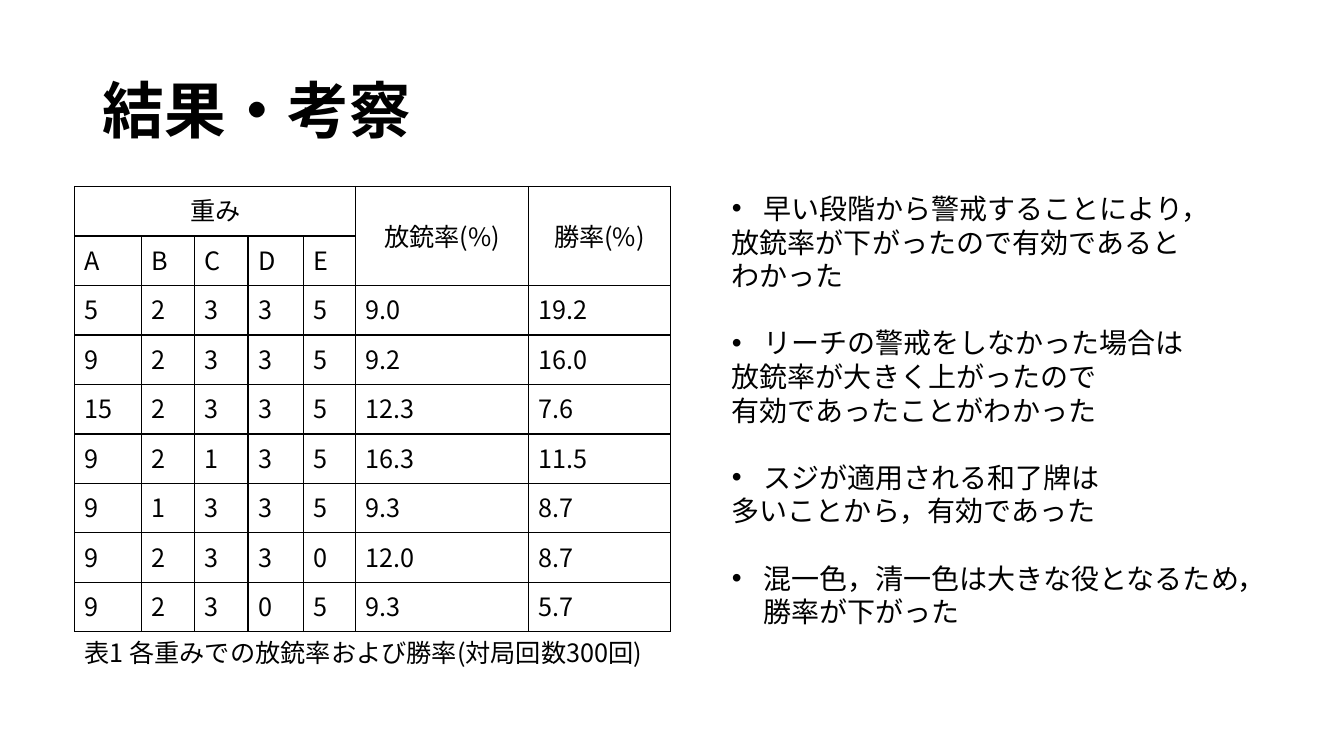
import dataclasses
import typing

import lxml.etree
import pptx
import pptx.dml.color
import pptx.enum.lang
import pptx.enum.text
import pptx.oxml.ns
import pptx.util

Inches = pptx.util.Inches
Pt = pptx.util.Pt
Align = pptx.enum.text.PP_ALIGN
Anchor = pptx.enum.text.MSO_ANCHOR


@dataclasses.dataclass(frozen=True)
class Theme:
    font: str = "Noto Sans CJK JP"
    ink: str = "000000"
    paper: str = "FFFFFF"
    title_size: int = 44
    body_size: int = 20
    table_size: int = 18
    border_width: int = 1


@dataclasses.dataclass(frozen=True)
class Box:
    left: float
    top: float
    width: float
    height: float


@dataclasses.dataclass(frozen=True)
class Heading:
    text: str
    row: int
    column: int
    last_row: int
    last_column: int


THEME = Theme()
TITLE_BOX = Box(0.92, 0.4, 11.5, 1.45)
TABLE_BOX = Box(0.74, 1.85, 5.93, 4.42)
CAPTION_BOX = Box(0.74, 6.27, 5.93, 0.4)
FINDINGS_BOX = Box(7.16, 1.85, 5.26, 4.48)
BULLET_INDENT = 0.31
FINDING_GAP = 24

COLUMN_WIDTHS = [0.66, 0.53, 0.53, 0.55, 0.52, 1.71, 1.41]
HEADINGS = [
    Heading("重み", 0, 0, 0, 4),
    Heading("放銃率(%)", 0, 5, 1, 5),
    Heading("勝率(%)", 0, 6, 1, 6),
]
RESULTS = [
    ["A", "B", "C", "D", "E"],
    ["5", "2", "3", "3", "5", "9.0", "19.2"],
    ["9", "2", "3", "3", "5", "9.2", "16.0"],
    ["15", "2", "3", "3", "5", "12.3", "7.6"],
    ["9", "2", "1", "3", "5", "16.3", "11.5"],
    ["9", "1", "3", "3", "5", "9.3", "8.7"],
    ["9", "2", "3", "3", "0", "12.0", "8.7"],
    ["9", "2", "3", "0", "5", "9.3", "5.7"],
]
FINDINGS = [
    ["早い段階から警戒することにより，", "放銃率が下がったので有効であると", "わかった"],
    ["リーチの警戒をしなかった場合は", "放銃率が大きく上がったので", "有効であったことがわかった"],
    ["スジが適用される和了牌は", "多いことから，有効であった"],
    ["混一色，清一色は大きな役となるため，勝率が下がった"],
]


def apply_format(target: typing.Any, values: dict[str, typing.Any]) -> None:
    for name, value in values.items():
        setattr(target, name, value)


def add_child(parent: typing.Any, tag: str, **attributes: str) -> typing.Any:
    return lxml.etree.SubElement(parent, pptx.oxml.ns.qn(tag), attributes)


def geometry(box: Box) -> dict[str, int]:
    return {name: Inches(value) for name, value in dataclasses.asdict(box).items()}


def write(paragraph: typing.Any, text: str, size: int, bold: bool = False,
          alignment: Align = Align.LEFT) -> None:
    paragraph.alignment = alignment
    run = paragraph.add_run()
    run.text = text
    apply_format(run.font, {
        "name": THEME.font,
        "size": Pt(size),
        "bold": bold,
        "language_id": pptx.enum.lang.MSO_LANGUAGE_ID.JAPANESE,
    })
    run.font.color.rgb = pptx.dml.color.RGBColor.from_string(THEME.ink)
    add_child(run.font._element, "a:ea", typeface=THEME.font)


def add_bullet(paragraph: typing.Any) -> None:
    properties = paragraph._p.get_or_add_pPr()
    indent = Inches(BULLET_INDENT)
    properties.set("marL", str(indent))
    properties.set("indent", str(-indent))
    add_child(properties, "a:buFont", typeface="Arial")
    add_child(properties, "a:buChar", char="•")


def draw_title(slide: typing.Any, text: str) -> None:
    title = slide.shapes.title
    apply_format(title, geometry(TITLE_BOX))
    apply_format(title.text_frame, {"vertical_anchor": Anchor.MIDDLE, "word_wrap": True})
    paragraph = title.text_frame.paragraphs[0]
    paragraph.line_spacing = 0.9
    write(paragraph, text, THEME.title_size, bold=True)


def style_cell(cell: typing.Any) -> None:
    properties = cell._tc.get_or_add_tcPr()
    for side in ("a:lnL", "a:lnR", "a:lnT", "a:lnB"):
        line = add_child(properties, side, w=str(Pt(THEME.border_width)))
        add_child(add_child(line, "a:solidFill"), "a:srgbClr", val=THEME.ink)
    cell.fill.solid()
    cell.fill.fore_color.rgb = pptx.dml.color.RGBColor.from_string(THEME.paper)


def draw_table(slide: typing.Any) -> None:
    row_count = len(RESULTS) + 1
    frame = slide.shapes.add_table(row_count, len(COLUMN_WIDTHS), **geometry(TABLE_BOX))
    table = frame.table
    apply_format(table, {"first_row": False, "horz_banding": False})
    for column, width in zip(table.columns, COLUMN_WIDTHS):
        column.width = Inches(width)
    for row in table.rows:
        row.height = Inches(TABLE_BOX.height / row_count)
    for cell in table.iter_cells():
        style_cell(cell)
    for heading in HEADINGS:
        cell = table.cell(heading.row, heading.column)
        cell.merge(table.cell(heading.last_row, heading.last_column))
        if heading.last_row > heading.row:
            cell.vertical_anchor = Anchor.MIDDLE
        write(cell.text_frame.paragraphs[0], heading.text, THEME.table_size,
              alignment=Align.CENTER)
    for row_index, values in enumerate(RESULTS, start=1):
        for column_index, value in enumerate(values):
            cell = table.cell(row_index, column_index)
            write(cell.text_frame.paragraphs[0], value, THEME.table_size)


def add_text_frame(slide: typing.Any, box: Box) -> typing.Any:
    text_frame = slide.shapes.add_textbox(**geometry(box)).text_frame
    apply_format(text_frame, {
        "word_wrap": True,
        "auto_size": pptx.enum.text.MSO_AUTO_SIZE.SHAPE_TO_FIT_TEXT,
    })
    return text_frame


def draw_findings(slide: typing.Any) -> None:
    text_frame = add_text_frame(slide, FINDINGS_BOX)
    for finding_index, lines in enumerate(FINDINGS):
        for line_index, line in enumerate(lines):
            first = finding_index == line_index == 0
            paragraph = text_frame.paragraphs[0] if first else text_frame.add_paragraph()
            if line_index == 0:
                paragraph.space_before = Pt(FINDING_GAP if finding_index else 0)
                add_bullet(paragraph)
            write(paragraph, line, THEME.body_size)


def main() -> None:
    presentation = pptx.Presentation()
    apply_format(presentation, {"slide_width": Inches(13.33), "slide_height": Inches(7.5)})
    slide = presentation.slides.add_slide(presentation.slide_layouts.get_by_name("Title Only"))
    draw_title(slide, "結果・考察")
    draw_table(slide)
    caption = add_text_frame(slide, CAPTION_BOX)
    write(caption.paragraphs[0], "表1 各重みでの放銃率および勝率(対局回数300回)", THEME.table_size)
    draw_findings(slide)
    presentation.save("out.pptx")


if __name__ == "__main__":
    main()
